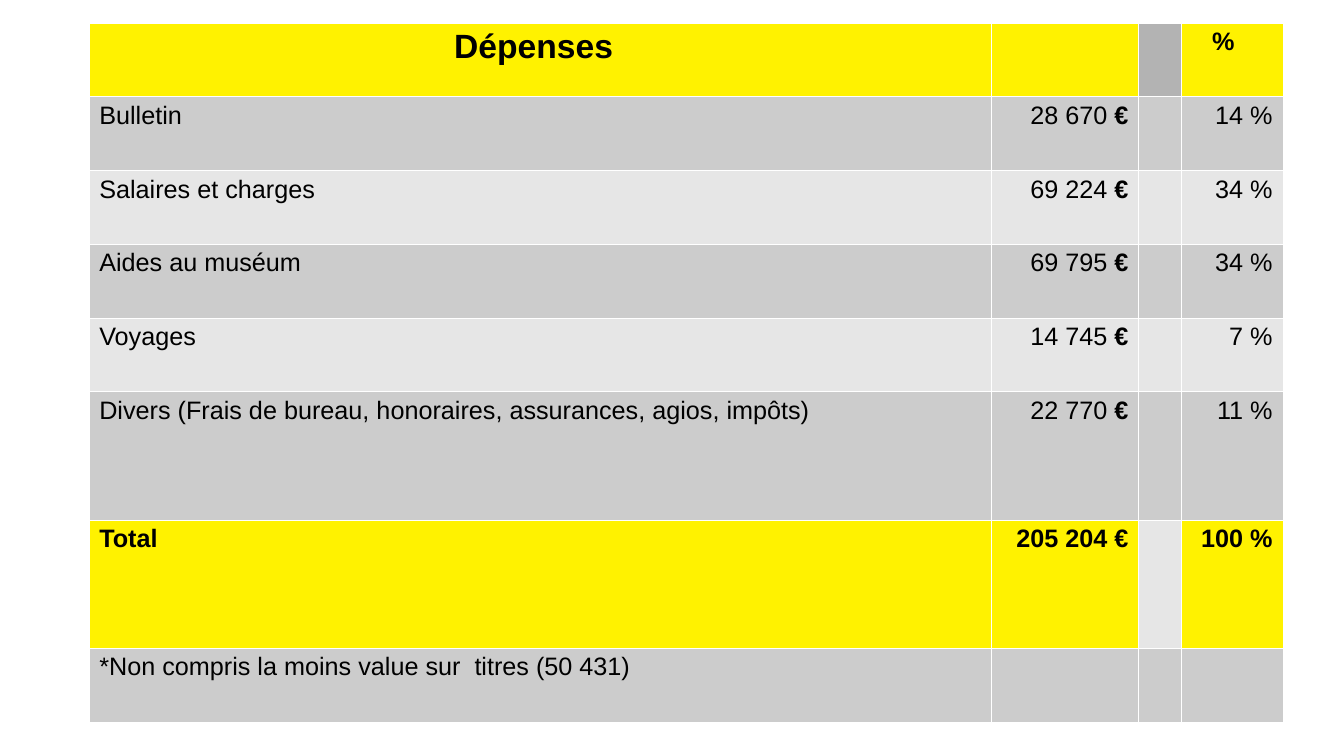
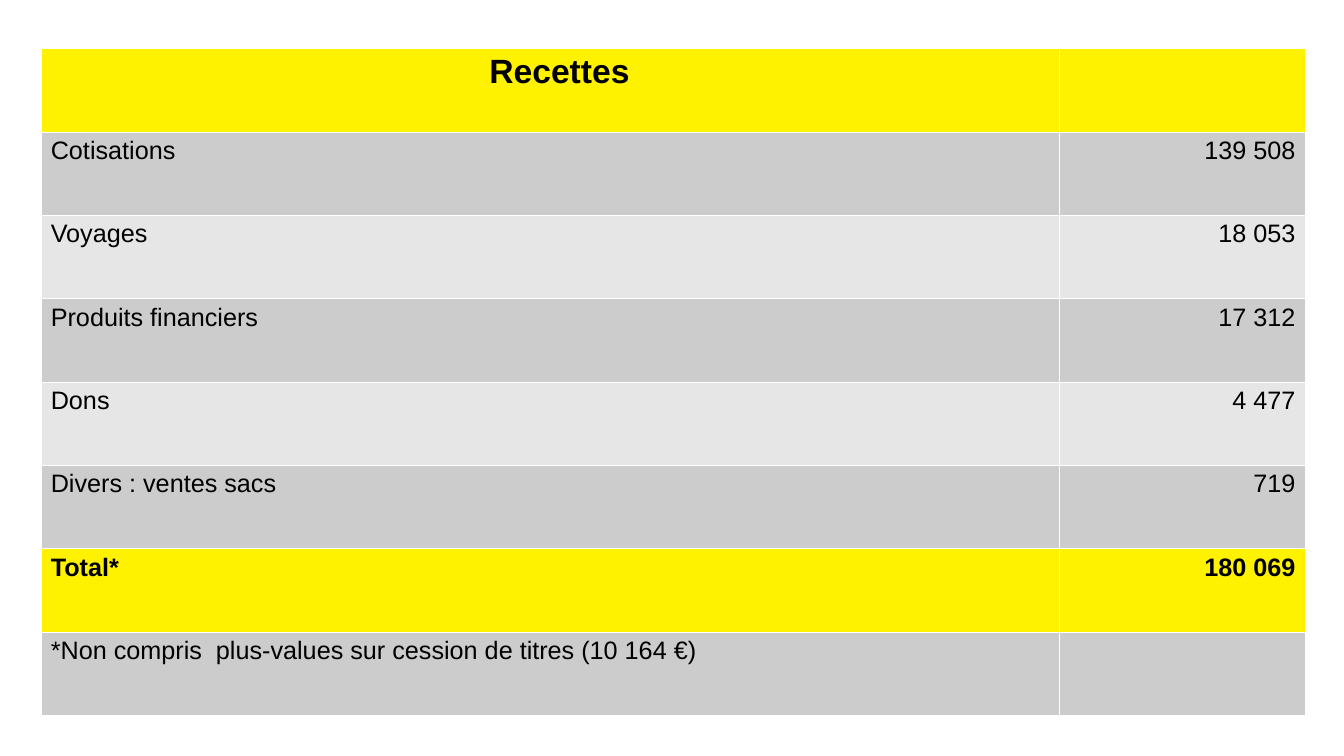
from dataclasses import dataclass
from typing import Optional

from lxml import etree
from pptx import Presentation
from pptx import util as u
from pptx.dml.color import RGBColor
from pptx.enum import text
from pptx.oxml import ns


@dataclass(frozen=True)
class Theme:
    font: str = "Arial"
    ink: str = "000000"
    border: str = "FFFFFF"
    highlight: str = "FFF200"
    spacer_header: str = "B3B3B3"
    bands: tuple[str, str] = ("E6E6E6", "CCCCCC")
    heading_size: int = 24
    body_size: int = 18
    border_width: float = 0.06
    side_margin: float = 0.1
    edge_margin: float = 0.05


@dataclass(frozen=True)
class Area:
    left: float
    top: float
    width: float
    height: float


@dataclass(frozen=True)
class Ledger:
    area: Area
    columns: tuple[float, ...]
    rows: tuple[float, ...]
    heading_indents: tuple[float, ...]
    lines: tuple[tuple[str, ...], ...]
    spacer: Optional[int] = None


THEME = Theme()
SLIDE_WIDTH = u.Inches(13.33)
SLIDE_HEIGHT = u.Inches(7.5)

LEDGERS = (
    Ledger(
        area=Area(0.0664, 0.03, 0.888, 0.925),
        columns=(8.95, 1.46, 0.42, 1.01),
        rows=(0.73,) * 5 + (1.27,) * 2 + (0.73,),
        heading_indents=(3.52, 0, 0, 0.21),
        lines=(
            ("Dépenses", "", "", "%"),
            ("Bulletin", "28 670 €", "", "14 %"),
            ("Salaires et charges", "69 224 €", "", "34 %"),
            ("Aides au muséum", "69 795 €", "", "34 %"),
            ("Voyages", "14 745 €", "", "7 %"),
            ("Divers (Frais de bureau, honoraires, assurances, agios, impôts)", "22 770 €", "", "11 %"),
            ("Total", "205 204 €", "", "100 %"),
            ("*Non compris la moins value sur  titres (50 431)", "", "", ""),
        ),
        spacer=2,
    ),
    Ledger(
        area=Area(0.0303, 0.064, 0.941, 0.882),
        columns=(10.11, 2.44),
        rows=(1,) * 8,
        heading_indents=(4.35, 0),
        lines=(
            ("Recettes", ""),
            ("Cotisations", "139 508"),
            ("Voyages", "18 053"),
            ("Produits financiers", "17 312"),
            ("Dons", "4 477"),
            ("Divers : ventes sacs", "719"),
            ("Total*", "180 069"),
            ("*Non compris  plus-values sur cession de titres (10 164 €)", ""),
        ),
    ),
)


def set_borders(cell) -> None:
    properties = cell._tc.get_or_add_tcPr()
    for side in ("lnL", "lnR", "lnT", "lnB"):
        line = etree.SubElement(properties, ns.qn(f"a:{side}"), w=str(u.Pt(THEME.border_width)))
        fill = etree.SubElement(line, ns.qn("a:solidFill"))
        etree.SubElement(fill, ns.qn("a:srgbClr"), val=THEME.border)


def cell_colour(ledger: Ledger, row: int, column: int) -> str:
    is_spacer = column == ledger.spacer
    if row == 0 and is_spacer:
        return THEME.spacer_header
    is_total = ledger.lines[row][0].startswith("Total")
    if (row == 0 or is_total) and not is_spacer:
        return THEME.highlight
    return THEME.bands[row % 2]


def write_cell(cell, content: str, size: int, bold: bool, align) -> None:
    paragraph = cell.text_frame.paragraphs[0]
    paragraph.alignment = align
    paragraph.font.size = u.Pt(size)
    if not content:
        return
    amount = content.removesuffix("€")
    paragraph.text = amount
    if amount != content:
        paragraph.add_run().text = "€"
    for run in paragraph.runs:
        run.font.name = THEME.font
        run.font.size = u.Pt(size)
        run.font.bold = bold or run.text == "€"
        run.font.color.rgb = RGBColor.from_string(THEME.ink)


def style_cell(cell, ledger: Ledger, row: int, column: int) -> None:
    is_heading = row == 0
    indent = ledger.heading_indents[column] if is_heading else 0
    cell.margin_left = u.Inches(THEME.side_margin + indent)
    cell.margin_right = u.Inches(THEME.side_margin)
    cell.margin_top = cell.margin_bottom = u.Inches(THEME.edge_margin)
    set_borders(cell)
    cell.fill.solid()
    cell.fill.fore_color.rgb = RGBColor.from_string(cell_colour(ledger, row, column))
    is_left = is_heading or column == 0
    write_cell(
        cell,
        ledger.lines[row][column],
        size=THEME.heading_size if is_heading and column == 0 else THEME.body_size,
        bold=is_heading or ledger.lines[row][0].startswith("Total"),
        align=text.PP_ALIGN.LEFT if is_left else text.PP_ALIGN.RIGHT,
    )


def draw_ledger(slide, ledger: Ledger) -> None:
    area = ledger.area
    width = int(SLIDE_WIDTH * area.width)
    height = int(SLIDE_HEIGHT * area.height)
    table = slide.shapes.add_table(
        len(ledger.rows),
        len(ledger.columns),
        int(SLIDE_WIDTH * area.left),
        int(SLIDE_HEIGHT * area.top),
        width,
        height,
    ).table
    table.first_row = table.horz_banding = False
    for column, share in zip(table.columns, ledger.columns):
        column.width = int(width * share / sum(ledger.columns))
    for row, share in zip(table.rows, ledger.rows):
        row.height = int(height * share / sum(ledger.rows))
    for row in range(len(ledger.rows)):
        for column in range(len(ledger.columns)):
            style_cell(table.cell(row, column), ledger, row, column)


def main() -> None:
    presentation = Presentation()
    presentation.slide_width = SLIDE_WIDTH
    presentation.slide_height = SLIDE_HEIGHT
    blank_layout = presentation.slide_layouts[6]
    for ledger in LEDGERS:
        draw_ledger(presentation.slides.add_slide(blank_layout), ledger)
    presentation.save("out.pptx")


if __name__ == "__main__":
    main()
